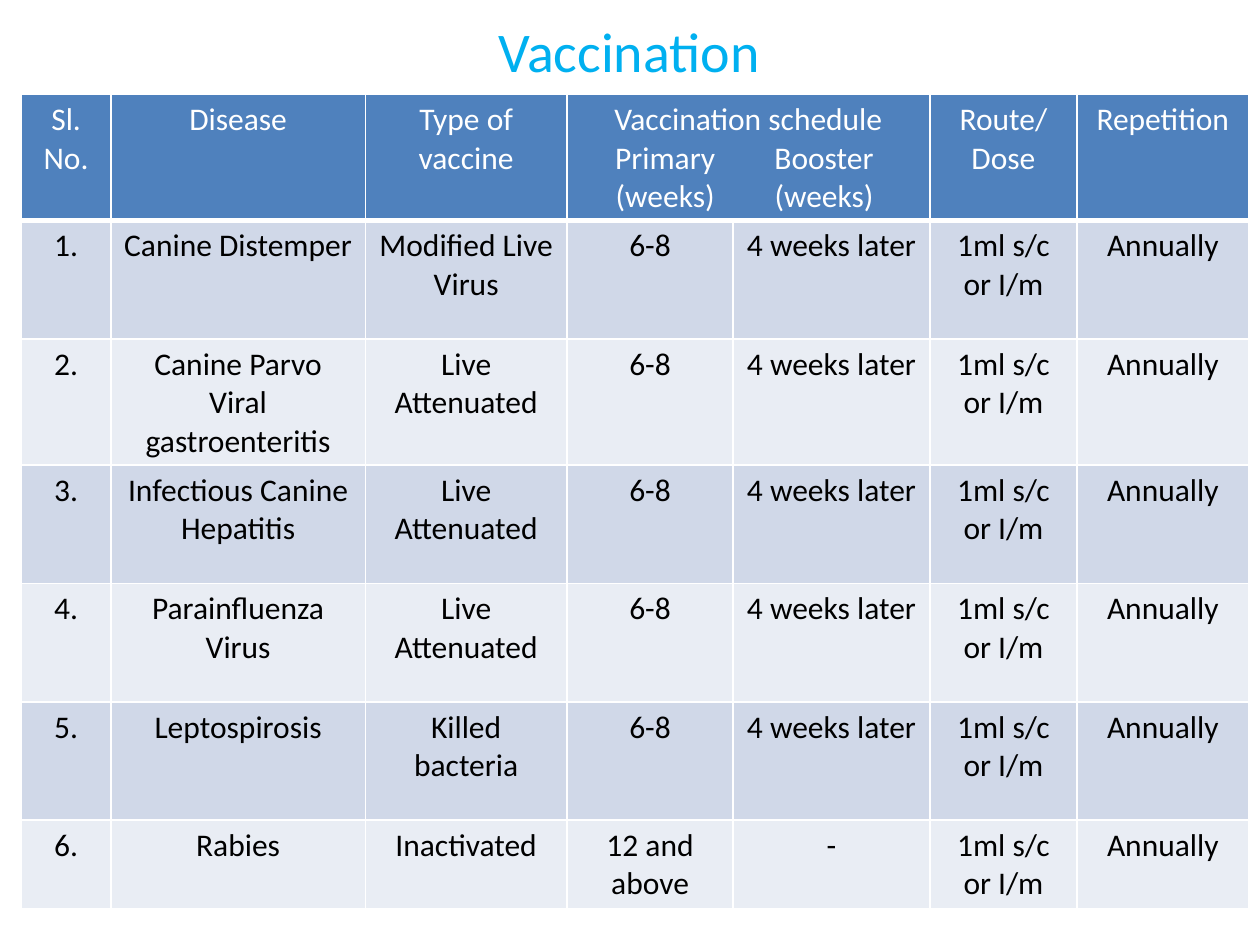
import dataclasses

import pptx
import pptx.dml.color
import pptx.enum.text
import pptx.oxml
import pptx.oxml.ns
import pptx.util
from pptx.util import Inches

CENTER = pptx.enum.text.PP_ALIGN.CENTER
LEFT = pptx.enum.text.PP_ALIGN.LEFT


@dataclasses.dataclass(frozen=True)
class Theme:
    font: str = "Calibri"
    title_size: int = 32
    table_size: int = 18
    title: str = "00B0F0"
    header: str = "4F81BD"
    bands: tuple = ("D0D8E8", "E9EDF4")
    light: str = "FFFFFF"
    dark: str = "000000"
    rule: int = 1
    header_rule: int = 3


THEME = Theme()
COLUMN_WIDTHS = (0.71, 2.02, 1.6, 1.32, 1.56, 1.17, 1.36)
ROW_HEIGHTS = (0.94,) * 6 + (0.61,)
SCHEDULE_COLUMN = 3
SCHEDULE_TABS = (0.68, 1.94)
SCHEDULE_LINES = ("\tPrimary\tBooster", "\t(weeks)\t(weeks)")
HEADINGS = ("Sl. No.", "Disease", "Type of vaccine", "Vaccination schedule",
            "", "Route/ Dose", "Repetition")
VACCINES = (
    ("Canine Distemper", "Modified Live Virus", "6-8", "4 weeks later"),
    ("Canine Parvo Viral gastroenteritis", "Live Attenuated", "6-8", "4 weeks later"),
    ("Infectious Canine Hepatitis", "Live Attenuated", "6-8", "4 weeks later"),
    ("Parainfluenza Virus", "Live Attenuated", "6-8", "4 weeks later"),
    ("Leptospirosis", "Killed bacteria", "6-8", "4 weeks later"),
    ("Rabies", "Inactivated", "12 and above", "-"),
)
DOSE = "1ml s/c or I/m"
REPETITION = "Annually"


def add_span(para, text, size, color, align=CENTER):
    para.alignment = align
    span = para.add_run()
    span.text = text
    span.font.name = THEME.font
    span.font.size = pptx.util.Pt(size)
    span.font.color.rgb = pptx.dml.color.RGBColor.from_string(color)


def set_center_tabs(para, stops):
    tabs = "".join(f'<a:tab pos="{Inches(stop)}" algn="ctr"/>' for stop in stops)
    para._p.get_or_add_pPr().insert_element_before(
        pptx.oxml.parse_xml(f'<a:tabLst {pptx.oxml.ns.nsdecls("a")}>{tabs}</a:tabLst>'),
        "a:defRPr", "a:extLst")


def style_cell(cell, fill, top=THEME.rule, bottom=THEME.rule):
    """Rule the cell on all four sides, then fill it."""
    sides = {"L": THEME.rule, "R": THEME.rule, "T": top, "B": bottom}
    properties = cell._tc.get_or_add_tcPr()
    for side, width in sides.items():
        properties.append(pptx.oxml.parse_xml(
            f'<a:ln{side} {pptx.oxml.ns.nsdecls("a")} w="{pptx.util.Pt(width)}">'
            f'<a:solidFill><a:srgbClr val="{THEME.light}"/></a:solidFill></a:ln{side}>'))
    cell.fill.solid()
    cell.fill.fore_color.rgb = pptx.dml.color.RGBColor.from_string(fill)


def add_title(page, left, top, width, height):
    box = page.shapes.add_textbox(left, top, width, height)
    box.text_frame.word_wrap = True
    add_span(box.text_frame.paragraphs[0], "Vaccination", THEME.title_size, THEME.title)


def fill_header(table):
    for column, heading in enumerate(HEADINGS):
        cell = table.cell(0, column)
        style_cell(cell, THEME.header, bottom=THEME.header_rule)
        if heading:
            add_span(cell.text_frame.paragraphs[0], heading, THEME.table_size, THEME.light)
    schedule = table.cell(0, SCHEDULE_COLUMN)
    schedule.merge(table.cell(0, SCHEDULE_COLUMN + 1))
    for line in SCHEDULE_LINES:
        para = schedule.text_frame.add_paragraph()
        add_span(para, line, THEME.table_size, THEME.light, LEFT)
        set_center_tabs(para, SCHEDULE_TABS)


def fill_body(table):
    for row, vaccine in enumerate(VACCINES, start=1):
        top = THEME.header_rule if row == 1 else THEME.rule
        for column, text in enumerate((f"{row}.", *vaccine, DOSE, REPETITION)):
            cell = table.cell(row, column)
            style_cell(cell, THEME.bands[(row - 1) % 2], top=top)
            add_span(cell.text_frame.paragraphs[0], text, THEME.table_size, THEME.dark)


def add_schedule_table(page, left, top, width, height):
    table = page.shapes.add_table(len(ROW_HEIGHTS), len(COLUMN_WIDTHS),
                                  left, top, width, height).table
    for column, size in zip(table.columns, COLUMN_WIDTHS):
        column.width = Inches(size)
    for row, size in zip(table.rows, ROW_HEIGHTS):
        row.height = Inches(size)
    fill_header(table)
    fill_body(table)


def main():
    deck = pptx.Presentation()
    deck.slide_width, deck.slide_height = Inches(10), Inches(7.5)
    page = deck.slides.add_slide(deck.slide_layouts[6])
    add_title(page, Inches(0.08), Inches(0.08), Inches(9.83), Inches(7.33))
    add_schedule_table(page, Inches(0.17), Inches(0.75),
                       Inches(sum(COLUMN_WIDTHS)), Inches(sum(ROW_HEIGHTS)))
    deck.save("out.pptx")


if __name__ == "__main__":
    main()
